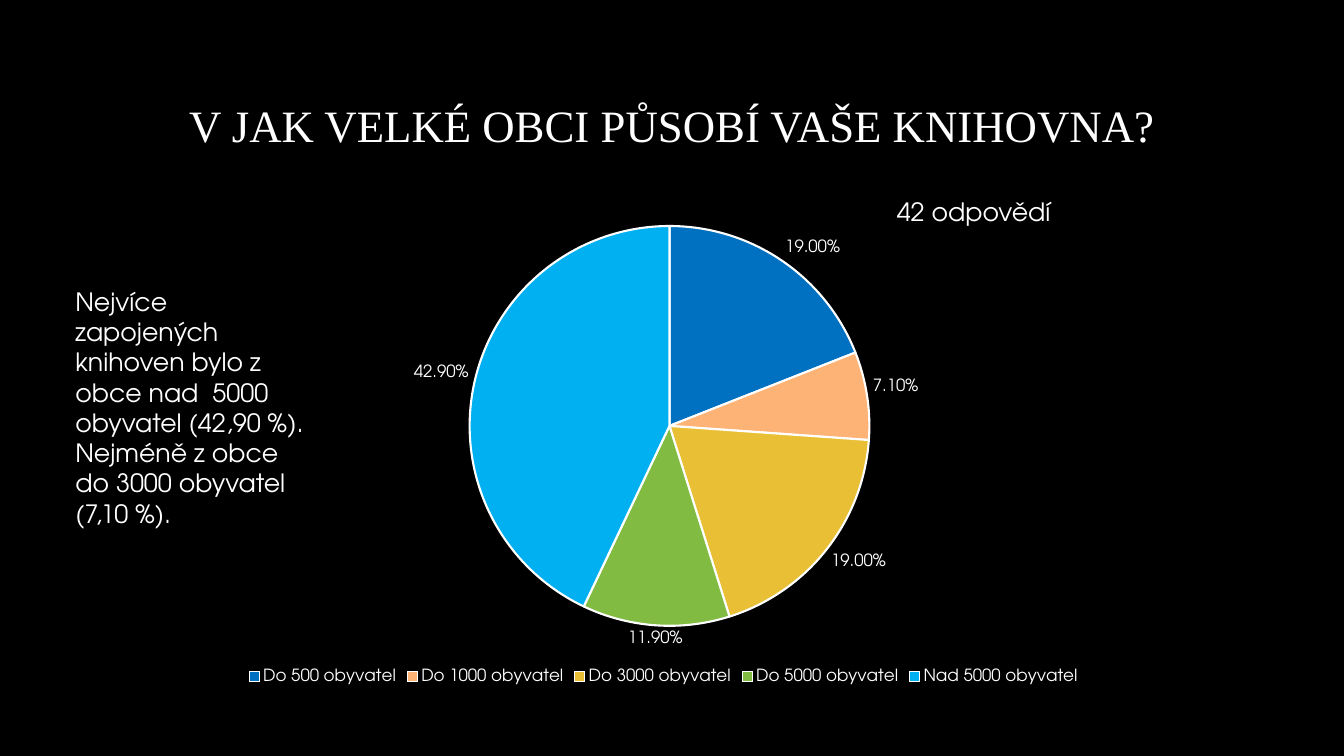
from lxml.etree import SubElement
from pptx import Presentation
from pptx.chart.data import CategoryChartData
from pptx.dml.color import RGBColor
from pptx.enum.chart import XL_CHART_TYPE, XL_LABEL_POSITION, XL_LEGEND_POSITION
from pptx.enum.text import MSO_ANCHOR, PP_ALIGN
from pptx.oxml.ns import qn
from pptx.util import Cm, Pt

SHARES = [
    ("Do 500 obyvatel", 0.19, "0070C0"),
    ("Do 1000 obyvatel", 0.071, "FEB376"),
    ("Do 3000 obyvatel", 0.19, "E9BF35"),
    ("Do 5000 obyvatel", 0.119, "81BB42"),
    ("Nad 5000 obyvatel", 0.429, "00B0F0"),
]


def color(hex_string):
    return RGBColor.from_string(hex_string)


def write(frame, text, size=18, face="TeX Gyre Adventor", ink="FFFFFF",
          align=PP_ALIGN.LEFT, anchor=MSO_ANCHOR.TOP, spacing=1.0):
    frame.word_wrap = True
    frame.vertical_anchor = anchor
    paragraph = frame.paragraphs[0]
    paragraph.alignment = align
    paragraph.line_spacing = spacing
    run = paragraph.add_run()
    run.text = text
    run.font.size = Pt(size)
    run.font.name = face
    run.font.color.rgb = color(ink)


class SurveySlide:
    face = "TeX Gyre Adventor"
    ink = "FFFFFF"
    ground = "000000"

    def __init__(self, deck):
        self.slide = deck.slides.add_slide(deck.slide_layouts[6])
        self.slide.background.fill.solid()
        self.slide.background.fill.fore_color.rgb = color(self.ground)

    def text(self, content, left, top, width, height, **style):
        box = self.slide.shapes.add_textbox(Cm(left), Cm(top), Cm(width), Cm(height))
        write(box.text_frame, content, **{"face": self.face, "ink": self.ink, **style})

    def style_font(self, font, size):
        font.size = Pt(size)
        font.name = self.face
        font.color.rgb = color(self.ink)

    def place_plot(self, chart, **fractions):
        plot_area = chart.plots[0]._element.getparent()
        layout = plot_area.find(qn("c:layout"))
        if layout is None:
            layout = SubElement(plot_area, qn("c:layout"))
            plot_area.insert(0, layout)
        manual = SubElement(layout, qn("c:manualLayout"))
        settings = {"layoutTarget": "inner", "xMode": "edge", "yMode": "edge", **fractions}
        for tag, value in settings.items():
            SubElement(manual, qn(f"c:{tag}")).set("val", str(value))

    def pie(self, shares, left, top, width, height):
        data = CategoryChartData(number_format="0.00%")
        data.categories = [name for name, _, _ in shares]
        data.add_series("Series 1", [share for _, share, _ in shares])
        chart = self.slide.shapes.add_chart(
            XL_CHART_TYPE.PIE, Cm(left), Cm(top), Cm(width), Cm(height), data).chart
        self.style_font(chart.font, 10)
        chart.has_title = False
        chart.has_legend = True
        chart.legend.position = XL_LEGEND_POSITION.BOTTOM
        chart.legend.include_in_layout = False
        self.style_font(chart.legend.font, 12)

        plot = chart.plots[0]
        plot.vary_by_categories = True
        for index, (_, _, fill) in enumerate(shares):
            wedge = plot.series[0].points[index].format
            wedge.fill.solid()
            wedge.fill.fore_color.rgb = color(fill)
            wedge.line.color.rgb = color(self.ink)
            wedge.line.width = Pt(1.5)

        labels = plot.series[0].data_labels
        labels.show_value = True
        labels.show_percentage = False
        labels.position = XL_LABEL_POSITION.OUTSIDE_END
        labels.number_format = "0.00%"
        labels.number_format_is_linked = False
        self.style_font(labels.font, 12)
        self.place_plot(chart, x=0.34, y=0.04, w=0.33, h=0.83)


def main():
    deck = Presentation()
    deck.slide_width, deck.slide_height = Cm(33.87), Cm(19.05)
    survey = SurveySlide(deck)
    survey.text("V JAK VELKÉ OBCI PŮSOBÍ VAŠE KNIHOVNA?", 2.34, 2.03, 29.2, 2.41,
                size=32, face="Times New Roman", align=PP_ALIGN.CENTER,
                anchor=MSO_ANCHOR.MIDDLE, spacing=0.9)
    survey.pie(SHARES, 1.42, 5.21, 30.6, 12.14)
    survey.text("42 odpovědí", 22.35, 4.83, 9.9, 1.8)
    survey.text("Nejvíce zapojených knihoven bylo z obce nad  5000 obyvatel (42,90 %). "
                "Nejméně z obce do 3000 obyvatel (7,10 %).", 1.65, 7.09, 6.38, 6.4)
    deck.save("out.pptx")


if __name__ == "__main__":
    main()
